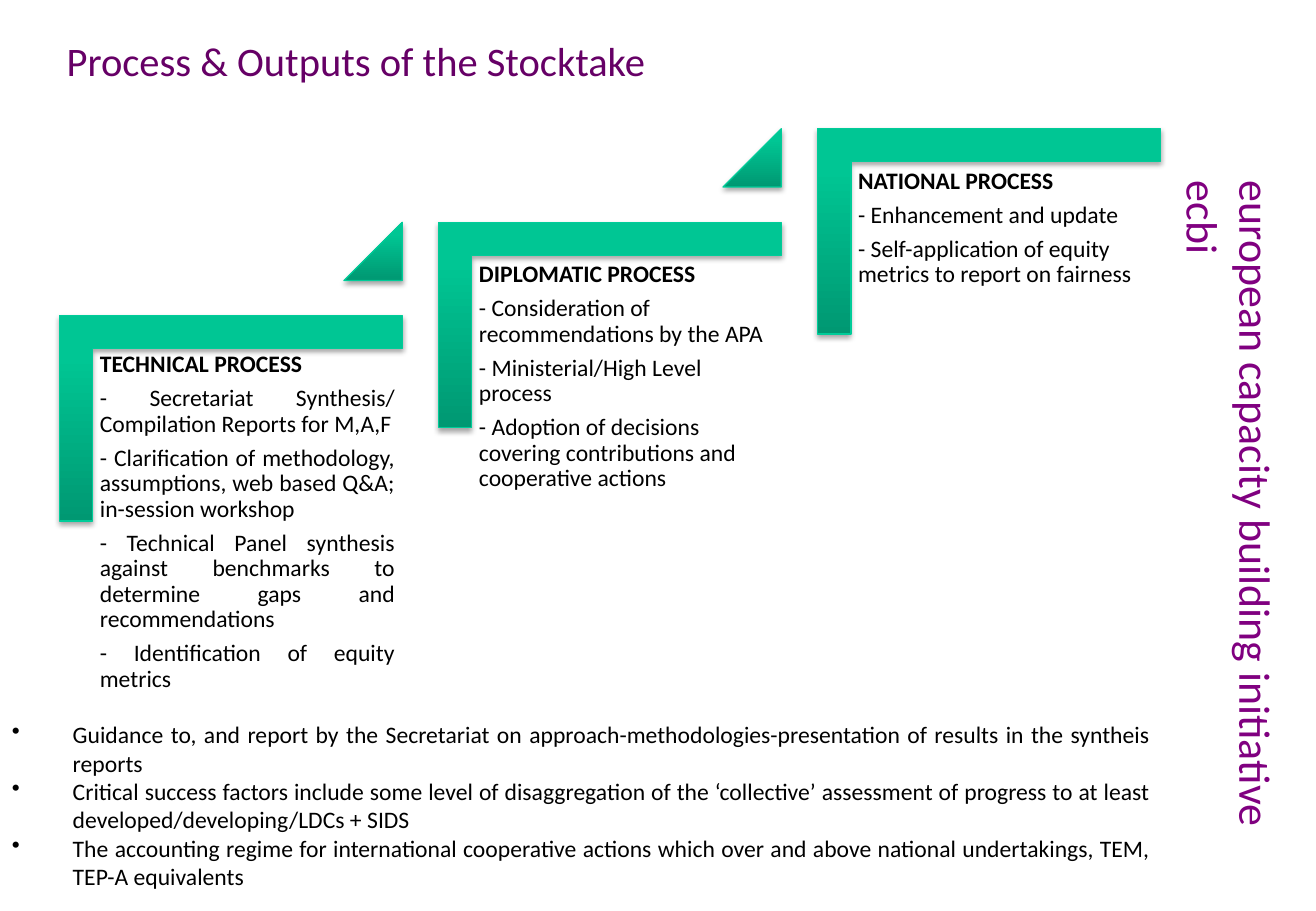
import dataclasses

import lxml.etree
import pptx
import pptx.dml.color
import pptx.enum.shapes
import pptx.enum.text
import pptx.oxml
import pptx.oxml.ns
import pptx.util

SHAPES = pptx.enum.shapes.MSO_SHAPE
ALIGN = pptx.enum.text.PP_ALIGN
AUTO_SIZE = pptx.enum.text.MSO_AUTO_SIZE
A_NS = pptx.oxml.ns.nsdecls("a")

SLIDE_W, SLIDE_H = 10.83, 7.5


@dataclasses.dataclass(frozen=True)
class Theme:
    font: str = "Calibri"
    title_size: int = 24
    side_size: int = 26
    body_size: int = 14
    title: str = "660066"
    side: str = "800080"
    body: str = "000000"
    outline: str = "00CC99"
    gradient: tuple = ((0, "009872"), (80, "00C694"), (100, "00C795"))


THEME = Theme()

# Staircase grid: each step is one column right and one row up
COLUMN, ROW = 3.12, 0.77
FIRST_LEFT, FIRST_TOP = 0.49, 2.6
FRAME_W, FRAME_H = 2.82, 1.69
BAR_SHARE = 0.161
BAR = BAR_SHARE * FRAME_H
ARROW = 0.48

# Heading, points, alignment, text height, shift of the text
STEPS = [
    ("TECHNICAL PROCESS",
     ["- Secretariat Synthesis/ Compilation Reports for M,A,F",
      "- Clarification of methodology, assumptions, web based Q&A; in-session workshop",
      "- Technical Panel synthesis against benchmarks to determine gaps and recommendations",
      "- Identification of equity metrics"],
     ALIGN.JUSTIFY, 2.81, -0.03),
    ("DIPLOMATIC PROCESS",
     ["- Consideration of recommendations by the APA",
      "- Ministerial/High Level process",
      "- Adoption of decisions covering contributions and cooperative actions"],
     ALIGN.LEFT, 2.23, 0),
    ("NATIONAL PROCESS",
     ["- Enhancement and update",
      "- Self-application of equity metrics to report on fairness"],
     ALIGN.LEFT, 2.23, 0),
]

REMARKS = [
    "Guidance to, and report by the Secretariat on approach-methodologies-presentation "
    "of results in the syntheis reports",
    "Critical success factors include some level of disaggregation of the ‘collective’ "
    "assessment of progress to at least developed/developing/LDCs + SIDS",
    "The accounting regime for international cooperative actions which over and above "
    "national undertakings, TEM, TEP-A equivalents",
]


def inches(*lengths):
    return [pptx.util.Inches(length) for length in lengths]


def percent(left, top, width, height):
    """Turn percentages of the slide into inches."""
    return (left * SLIDE_W / 100, top * SLIDE_H / 100,
            width * SLIDE_W / 100, height * SLIDE_H / 100)


def set_all(target, values):
    for name, value in values.items():
        setattr(target, name, value)


def add_text(slide, box, lines, size, color, paragraph_format=None,
             frame_format=None, bold_first=False, bullet=False):
    frame = slide.shapes.add_textbox(*inches(*box)).text_frame
    set_all(frame, {"word_wrap": True, **(frame_format or {})})
    for index, line in enumerate(lines):
        paragraph = frame.paragraphs[0] if index == 0 else frame.add_paragraph()
        set_all(paragraph, paragraph_format or {})
        if bullet:
            add_bullet(paragraph)
        run = paragraph.add_run()
        run.text = line
        set_all(run.font, {"name": THEME.font, "size": pptx.util.Pt(size),
                           "bold": bold_first and index == 0})
        run.font.color.rgb = pptx.dml.color.RGBColor.from_string(color)
    return frame


def add_bullet(paragraph):
    properties = paragraph._p.get_or_add_pPr()
    hanging = pptx.util.Inches(0.5)
    properties.set("marL", str(hanging))
    properties.set("indent", str(-hanging))
    mark = lxml.etree.SubElement(properties, pptx.oxml.ns.qn("a:buChar"))
    mark.set("char", "•")


def add_green_shape(slide, kind, box, adjustments, rotation=0):
    shape = slide.shapes.add_shape(kind, *inches(*box))
    shape.rotation = rotation
    for index, value in enumerate(adjustments):
        shape.adjustments[index] = value
    shape.line.color.rgb = pptx.dml.color.RGBColor.from_string(THEME.outline)
    shape.line.width = pptx.util.Pt(0.75)

    # Gradient stays upright when the shape is turned
    stops = "".join(f'<a:gs pos="{position * 1000}"><a:srgbClr val="{color}"/></a:gs>'
                    for position, color in THEME.gradient)
    properties = shape._element.spPr
    properties.find(pptx.oxml.ns.qn("a:ln")).addprevious(pptx.oxml.parse_xml(
        f'<a:gradFill {A_NS} rotWithShape="0"><a:gsLst>{stops}</a:gsLst>'
        '<a:lin ang="16200000" scaled="0"/></a:gradFill>'))

    # Soft shadow below
    shape.shadow.inherit = False
    effects = properties.find(pptx.oxml.ns.qn("a:effectLst"))
    effects.append(pptx.oxml.parse_xml(
        f'<a:outerShdw {A_NS} blurRad="{pptx.util.Pt(3.1)}" dist="{pptx.util.Pt(1.8)}" '
        'dir="5400000" rotWithShape="0"><a:srgbClr val="000000">'
        '<a:alpha val="35000"/></a:srgbClr></a:outerShdw>'))


def add_step(slide, number, heading, points, alignment, text_height, shift):
    left = FIRST_LEFT + number * COLUMN
    top = FIRST_TOP - number * ROW

    # Frame: an upright corner turned a quarter about its centre
    turn = (FRAME_W - FRAME_H) / 2
    add_green_shape(slide, SHAPES.CORNER, (left + turn, top - turn, FRAME_H, FRAME_W),
                    (BAR_SHARE, BAR_SHARE), rotation=90)

    # Text inside the frame
    inset = pptx.util.Inches(0.06)
    add_text(slide, (left + BAR, top + BAR + shift, FRAME_W - BAR, text_height),
             [heading, *points], THEME.body_size, THEME.body,
             {"alignment": alignment, "line_spacing": 0.9,
              "space_after": pptx.util.Pt(5)},
             {f"margin_{side}": inset for side in ("left", "top", "right", "bottom")},
             bold_first=True)

    # Arrow up to the next step
    if number < len(STEPS) - 1:
        add_green_shape(slide, SHAPES.ISOSCELES_TRIANGLE,
                        (left + FRAME_W - ARROW, top - ROW, ARROW, ARROW), (1,))


def main():
    deck = pptx.Presentation()
    deck.slide_width, deck.slide_height = inches(SLIDE_W, SLIDE_H)
    slide = deck.slides.add_slide(deck.slide_layouts[6])
    grow = {"auto_size": AUTO_SIZE.SHAPE_TO_FIT_TEXT}

    # Vertical name at the right edge
    side_name = add_text(slide, percent(91.04, 18.53, 6.93, 79.87),
                         ["european capacity building initiative ecbi"],
                         THEME.side_size, THEME.side)
    side_name._txBody.bodyPr.set("vert", "eaVert")

    # Title
    add_text(slide, percent(4.16, 3.33, 73.78, 6.67),
             ["Process & Outputs of the Stocktake"],
             THEME.title_size, THEME.title, frame_format=grow)

    # Remarks at the foot
    add_text(slide, percent(0, 78.4, 88.37, 20.13), REMARKS,
             THEME.body_size, THEME.body, {"alignment": ALIGN.JUSTIFY},
             grow, bullet=True)

    # Staircase
    for number, step in enumerate(STEPS):
        add_step(slide, number, *step)

    deck.save("out.pptx")


if __name__ == "__main__":
    main()
